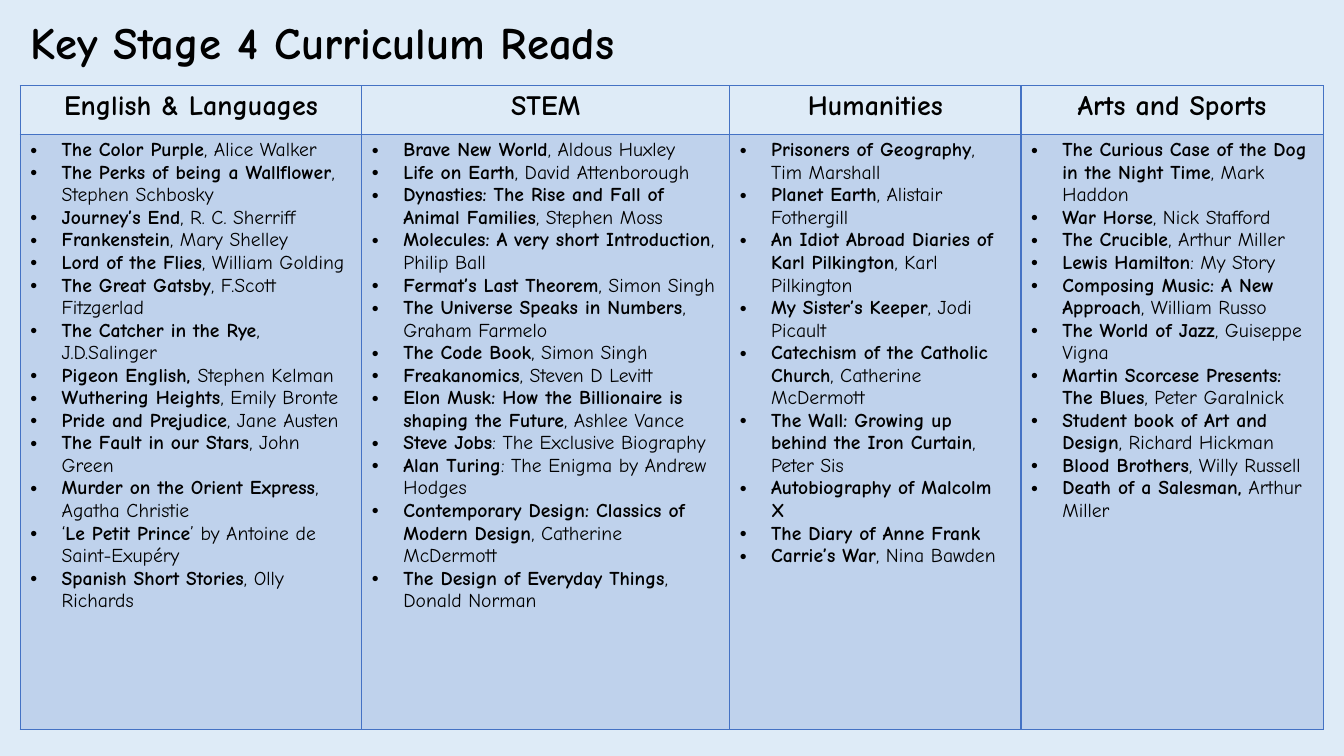
from lxml import etree
from pptx import Presentation
from pptx import util as u
from pptx.dml import color
from pptx.enum import text
from pptx.oxml import ns

READS = {
    "English & Languages": (8.61, [
        "*The Color Purple*, Alice Walker",
        "*The Perks of being a Wallflower*, Stephen Schbosky",
        "*Journey’s End*, R. C. Sherriff",
        "*Frankenstein*, Mary Shelley",
        "*Lord of the Flies*, William Golding",
        "*The Great Gatsby*, F.Scott Fitzgerlad",
        "*The Catcher in the Rye*, J.D.Salinger",
        "*Pigeon English, *Stephen Kelman",
        "*Wuthering Heights*, Emily Bronte",
        "*Pride and Prejudice*, Jane Austen",
        "*The Fault in our Stars*, John Green",
        "*Murder on the Orient Express*, Agatha Christie",
        "‘*Le Petit Prince*’ by Antoine de Saint-Exupéry",
        "*Spanish Short Stories*, Olly Richards",
    ]),
    "STEM": (9.27, [
        "*Brave New World*, Aldous Huxley",
        "*Life on Earth*, David Attenborough",
        "*Dynasties: The Rise and Fall of Animal Families*, Stephen Moss",
        "*Molecules: A very short Introduction*, Philip Ball",
        "*Fermat’s Last Theorem*, Simon Singh",
        "*The Universe Speaks in Numbers*, Graham Farmelo",
        "*The Code Book*, Simon Singh",
        "*Freakanomics*, Steven D Levitt",
        "*Elon Musk: How the Billionaire is shaping the Future*, Ashlee Vance",
        "*Steve Jobs*: The Exclusive Biography",
        "*Alan Turing*: The Enigma by Andrew Hodges",
        "*Contemporary Design: Classics of Modern Design*, Catherine McDermott",
        "*The Design of Everyday Things*, Donald Norman",
    ]),
    "Humanities": (7.34, [
        "*Prisoners of Geography*, Tim Marshall",
        "*Planet Earth*, Alistair Fothergill",
        "*An Idiot Abroad Diaries of Karl Pilkington*, Karl Pilkington",
        "*My Sister’s Keeper*, Jodi Picault",
        "*Catechism of the Catholic Church*, Catherine McDermott",
        "*The Wall: Growing up behind the Iron Curtain*, Peter Sis",
        "*Autobiography of Malcolm X*",
        "*The Diary of Anne Frank*",
        "*Carrie’s War*, Nina Bawden",
    ]),
    "Arts and Sports": (7.62, [
        "*The Curious Case of the Dog in the Night Time*, Mark Haddon",
        "*War Horse*, Nick Stafford",
        "*The Crucible*, Arthur Miller",
        "*Lewis Hamilton*: My Story",
        "*Composing Music: A New Approach*, William Russo",
        "*The World of Jazz*, Guiseppe Vigna",
        "*Martin Scorcese Presents: The Blues*, Peter Garalnick",
        "*Student book of Art and Design*, Richard Hickman",
        "*Blood Brothers*, Willy Russell",
        "*Death of a Salesman,* Arthur Miller",
    ]),
}


def rgb(code):
    return color.RGBColor.from_string(code)


def put(item, form):
    for key, val in form.items():
        setattr(item, key, val)


def sub(node, tag, **attrs):
    return etree.SubElement(node, ns.qn(tag), attrs)


class Page:
    """Draws styled titles and tables on one slide."""

    face, ink, blue, back = "Comic Neue", "000000", "4472C4", "DEEBF7"

    def __init__(self, slide):
        self.slide = slide
        fill = slide.background.fill
        fill.solid()
        fill.fore_color.rgb = rgb(self.back)

    def runs(self, para, words, size):
        for i, part in enumerate(words.split("*")):
            if part:
                run = para.add_run()
                run.text = part
                put(run.font, {"name": self.face, "size": u.Pt(size), "bold": i % 2 == 1})
                run.font.color.rgb = rgb(self.ink)

    def title(self, words, *box):
        frame = self.slide.shapes.add_textbox(*map(u.Cm, box)).text_frame
        put(frame, {"word_wrap": True, "auto_size": text.MSO_AUTO_SIZE.SHAPE_TO_FIT_TEXT})
        self.runs(frame.paragraphs[0], f"*{words}*", 32)

    def edge(self, cell):
        props = cell._tc.get_or_add_tcPr()
        for side in "LRTB":
            line = sub(props, f"a:ln{side}", w=str(u.Pt(1)))
            sub(sub(line, "a:solidFill"), "a:srgbClr", val=self.blue)

    def head(self, cell, words):
        self.edge(cell)
        cell.fill.background()
        para = cell.text_frame.paragraphs[0]
        para.alignment = text.PP_ALIGN.CENTER
        self.runs(para, f"*{words}*", 20)

    def books(self, cell, names):
        self.edge(cell)
        cell.fill.solid()
        cell.fill.fore_color.rgb = rgb(self.blue)
        tint = cell._tc.tcPr.find(ns.qn("a:solidFill"))[0]
        sub(tint, "a:alpha", val="20000")
        frame = cell.text_frame
        dent = u.Cm(0.79)
        for i, name in enumerate(names):
            para = frame.add_paragraph() if i else frame.paragraphs[0]
            props = para._p.get_or_add_pPr()
            props.set("marL", str(dent))
            props.set("indent", str(-dent))
            sub(props, "a:buFont", typeface="Arial")
            sub(props, "a:buChar", char="•")
            self.runs(para, name, 14)

    def table(self, data, left, top, rows):
        wide = sum(width for width, _ in data.values())
        box = map(u.Cm, (left, top, wide, sum(rows)))
        grid = self.slide.shapes.add_table(len(rows), len(data), *box).table
        put(grid, {"first_row": False, "horz_banding": False})
        for row, high in zip(grid.rows, rows):
            row.height = u.Cm(high)
        for i, (name, (width, names)) in enumerate(data.items()):
            grid.columns[i].width = u.Cm(width)
            self.head(grid.cell(0, i), name)
            self.books(grid.cell(1, i), names)


def main():
    deck = Presentation()
    put(deck, {"slide_width": u.Cm(33.87), "slide_height": u.Cm(19.05)})
    page = Page(deck.slides.add_slide(deck.slide_layouts[6]))
    page.title("Key Stage 4 Curriculum Reads", 0.51, 0.25, 17.88, 1.63)
    page.table(READS, 0.51, 2.16, (1.22, 15.01))
    deck.save("out.pptx")


if __name__ == "__main__":
    main()
